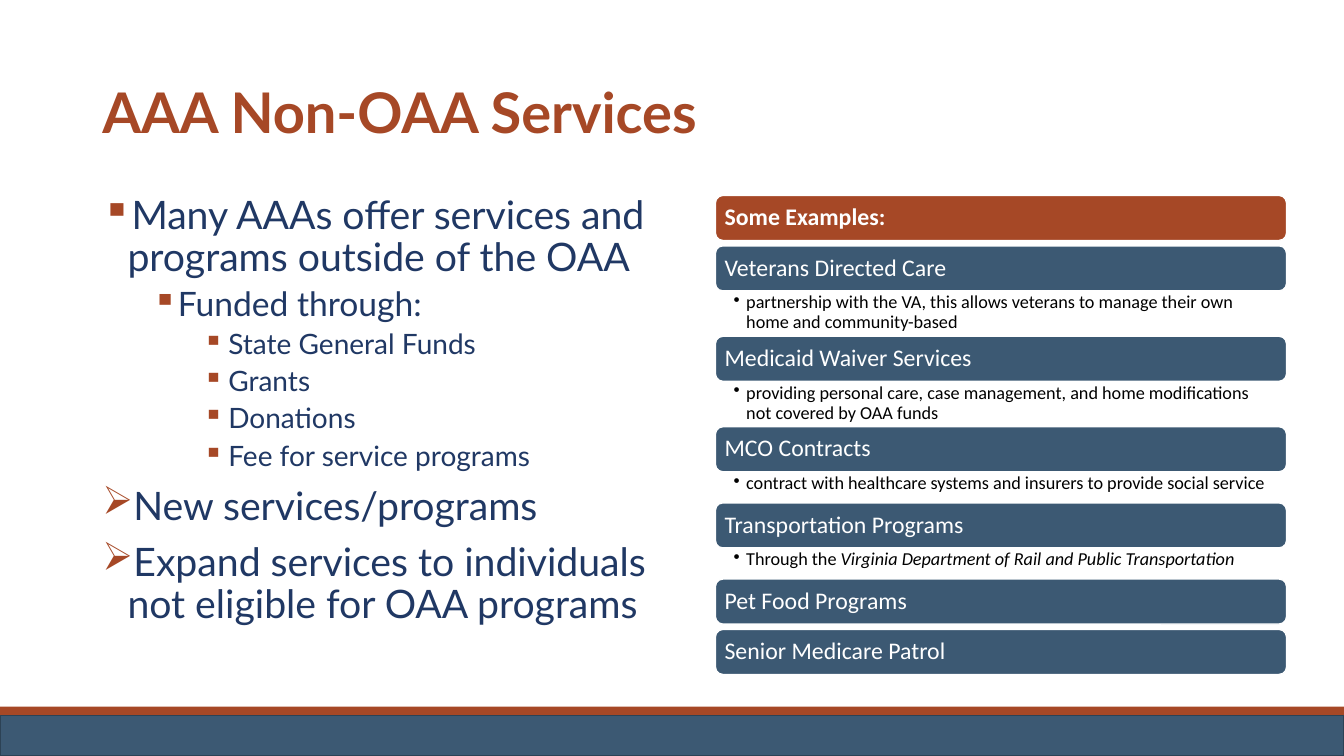
"""Build the slide on AAA services outside the OAA."""
import dataclasses

import lxml.etree
import pptx
import pptx.dml.color
import pptx.enum.shapes
import pptx.enum.text
import pptx.oxml.ns
import pptx.util

Pt = pptx.util.Pt
Anchor = pptx.enum.text.MSO_ANCHOR
Shape = pptx.enum.shapes.MSO_SHAPE


@dataclasses.dataclass(frozen=True)
class Theme:
    rust: str = "A64826"
    slate: str = "3C5973"
    edge: str = "2C4255"
    navy: str = "203864"
    white: str = "FFFFFF"
    black: str = "000000"
    main_font: str = "Lato"
    card_font: str = "Calibri"
    title_size: int = 40
    body_sizes: tuple = (28, 24, 20)
    card_size: int = 17
    detail_size: int = 13


theme = Theme()


def add_bar(page, kind, bounds, fill, line=None):
    """Add a filled shape with an optional one-point outline."""
    bar = page.shapes.add_shape(kind, *map(Pt, bounds))
    bar.shadow.inherit = False
    bar.fill.solid()
    bar.fill.fore_color.rgb = pptx.dml.color.RGBColor.from_string(fill)
    if line:
        bar.line.color.rgb = pptx.dml.color.RGBColor.from_string(line)
        bar.line.width = Pt(1)
    else:
        bar.line.fill.background()
    return bar


def write_text(box, margins, anchor, entries):
    """Write paragraphs given as (runs, colour, font format, paragraph options)."""
    frame = box.text_frame
    left, top, right, bottom = map(Pt, margins)
    frame_format = {"word_wrap": True, "vertical_anchor": anchor, "margin_left": left,
                    "margin_top": top, "margin_right": right, "margin_bottom": bottom}
    for name, value in frame_format.items():
        setattr(frame, name, value)
    for index, (runs, color, font_format, options) in enumerate(entries):
        para = frame.paragraphs[0] if index == 0 else frame.add_paragraph()
        para_format = {"alignment": pptx.enum.text.PP_ALIGN.LEFT, "line_spacing": 0.9,
                       "level": options.get("level", 0),
                       "space_before": Pt(options.get("before", 0) if index else 0)}
        for name, value in para_format.items():
            setattr(para, name, value)
        if "bullet" in options:
            properties = para._p.get_or_add_pPr()
            properties.set("marL", str(Pt(options["indent"])))
            properties.set("indent", str(-Pt(options["hang"])))
            tint = lxml.etree.SubElement(properties, pptx.oxml.ns.qn("a:buClr"))
            lxml.etree.SubElement(tint, pptx.oxml.ns.qn("a:srgbClr"), val=options["tint"])
            lxml.etree.SubElement(properties, pptx.oxml.ns.qn("a:buChar"), char=options["bullet"])
        for text, italic in runs:
            span = para.add_run()
            span.text = text
            span.font.color.rgb = pptx.dml.color.RGBColor.from_string(color)
            for name, value in {**font_format, "italic": italic}.items():
                setattr(span.font, name, value)


deck = pptx.Presentation()
deck.slide_width, deck.slide_height = Pt(960), Pt(540)
page = deck.slides.add_slide(deck.slide_layouts[6])

add_bar(page, Shape.RECTANGLE, (0, 504.8, 960, 35.2), theme.rust)
add_bar(page, Shape.RECTANGLE, (0, 511.2, 960, 28.4), theme.slate, theme.edge)

title_format = {"name": theme.main_font, "size": Pt(theme.title_size), "bold": True}
title = page.shapes.add_textbox(Pt(66), Pt(41), Pt(828), Pt(83))
write_text(title, (7.2, 3.6, 7.2, 3.6), Anchor.MIDDLE,
           [([("AAA Non-OAA Services", False)], theme.rust, title_format, {})])

points = [
    (0, "▪", "Many AAAs offer services and programs outside of the OAA"),
    (1, "▪", "Funded through:"),
    (2, "▪", "State General Funds"),
    (2, "▪", "Grants"),
    (2, "▪", "Donations"),
    (2, "▪", "Fee for service programs"),
    (0, "➢", "New services/programs"),
    (0, "➢", "Expand services to individuals not eligible for OAA programs"),
]
body_entries = []
for level, bullet, text in points:
    font_format = {"name": theme.main_font, "size": Pt(theme.body_sizes[level])}
    options = {"level": level, "bullet": bullet, "tint": theme.rust,
               "indent": 18 + 36 * level, "hang": 18, "before": 5 if level else 10}
    body_entries.append(([(text, False)], theme.navy, font_format, options))
body = page.shapes.add_textbox(Pt(66), Pt(136), Pt(408), Pt(343))
write_text(body, (7.2, 3.6, 7.2, 3.6), Anchor.TOP, body_entries)

cards = [
    ("Some Examples:", [], 0),
    ("Veterans Directed Care",
     [("partnership with the VA, this allows veterans to manage their own "
       "home and community-based", False)], 2),
    ("Medicaid Waiver Services",
     [("providing personal care, case management, and home modifications "
       "not covered by OAA funds", False)], 2),
    ("MCO Contracts",
     [("contract with healthcare systems and insurers to provide social service", False)], 1),
    ("Transportation Programs",
     [("Through the ", False),
      ("Virginia Department of Rail and Public Transportation", True)], 1),
    ("Pet Food Programs", [], 0),
    ("Senior Medicare Patrol", [], 0),
]
card_left, card_width, card_height = 511, 408, 32.2
detail_heights = (3.8, 22.2, 32.4)
detail_format = {"name": theme.card_font, "size": Pt(theme.detail_size)}
detail_options = {"level": 1, "bullet": "•", "tint": theme.black, "indent": 9, "hang": 9}
top = 139.6
for index, (heading, detail, lines) in enumerate(cards):
    fill = theme.slate if index else theme.rust
    card = add_bar(page, Shape.ROUNDED_RECTANGLE, (card_left, top, card_width, card_height),
                   fill, theme.white)
    heading_format = {"name": theme.card_font, "size": Pt(theme.card_size), "bold": index == 0}
    write_text(card, (5, 5, 5, 5), Anchor.MIDDLE,
               [([(heading, False)], theme.white, heading_format, {})])
    top += card_height
    if detail:
        box = page.shapes.add_textbox(Pt(card_left), Pt(top), Pt(card_width),
                                      Pt(detail_heights[lines]))
        write_text(box, (13, 1.6, 9, 1.6), Anchor.TOP,
                   [(detail, theme.black, detail_format, detail_options)])
    top += detail_heights[lines]

deck.save("out.pptx")
